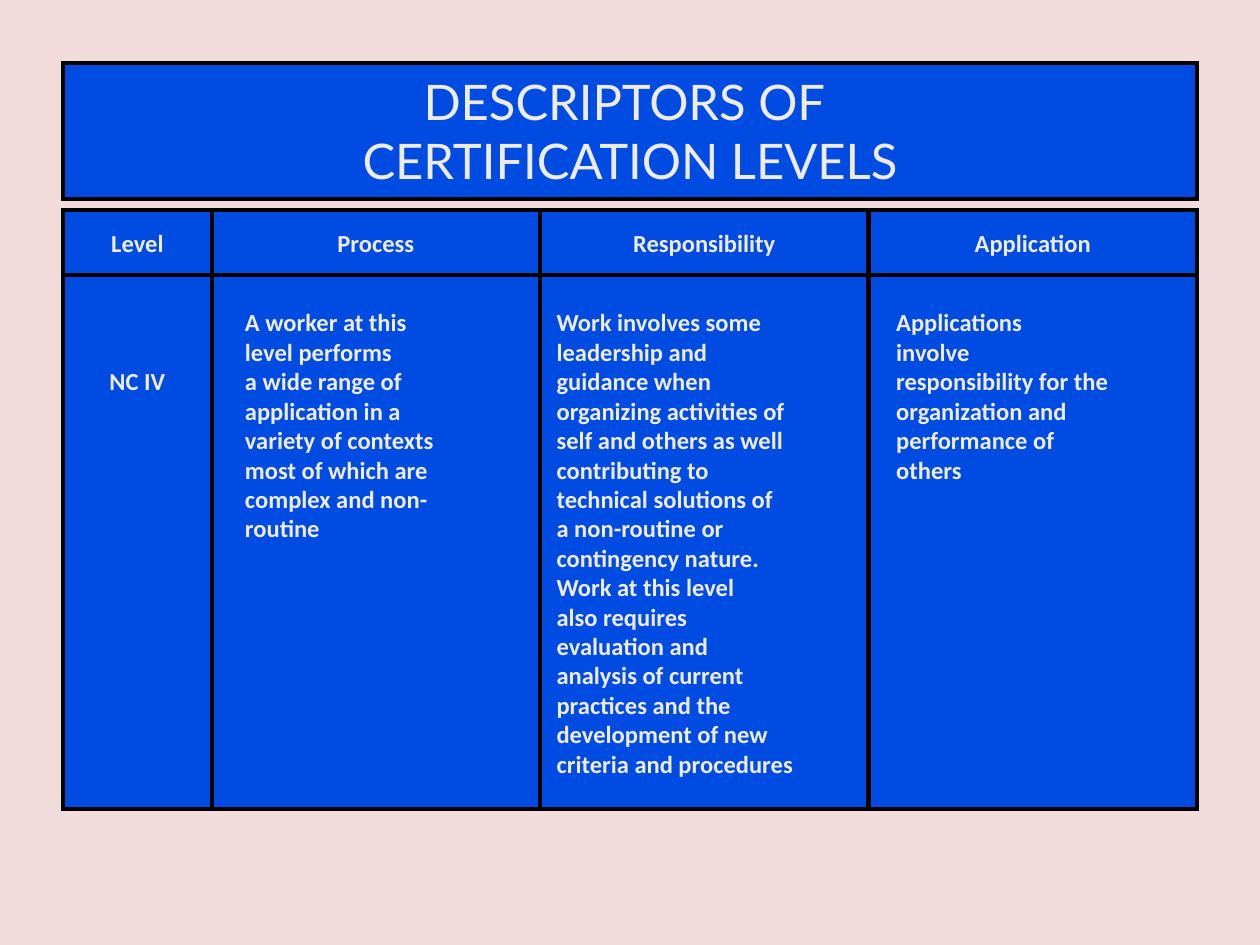
from lxml import etree
from pptx import Presentation
from pptx.dml.color import RGBColor
from pptx.enum import shapes, text
from pptx.oxml import ns
from pptx.util import Pt

BLUE, BLACK, CREAM, PINK = "004BE2", "000000", "EEECE1", "F2DCDB"
LEFT, WIDTH = 36, 648
LEVEL_WIDTH = 85
HEAD_TOP, HEAD_HEIGHT, BODY_HEIGHT = 120, 37, 305.3
INSET_X, INSET_Y = 9.4, 5

TITLE = ["DESCRIPTORS OF ", "CERTIFICATION LEVELS"]

# heading, body lines, body left inset, body top inset
COLUMNS = [
    ("Level", ["NC IV"], INSET_X, 52.3),
    ("Process", [
        "A worker at this", "level performs", "a wide range of",
        "application in a", "variety of contexts", "most of which are",
        "complex and non-", "routine"], 19, 18.7),
    ("Responsibility", [
        "Work involves some", "leadership and", "guidance when",
        "organizing activities of", "self and others as well",
        "contributing to", "technical solutions of", "a non-routine or",
        "contingency nature.", "Work at this level", "also requires",
        "evaluation and", "analysis of current", "practices and the",
        "development of new", "criteria and procedures"], INSET_X, 18.7),
    ("Application", [
        "Applications", "involve", "responsibility for the",
        "organization and", "performance of", "others"], 15.8, 18.7),
]


def paint(fill, color):
    fill.solid()
    fill.fore_color.rgb = RGBColor.from_string(color)


def style_box(box, anchor, left=INSET_X, top=INSET_Y):
    """Give a box the blue panel look, with square outline corners."""
    paint(box.fill, BLUE)
    paint(box.line.fill, BLACK)
    box.line.width = Pt(2.25)
    outline = box._element.spPr.find(ns.qn("a:ln"))
    etree.SubElement(outline, ns.qn("a:miter"), lim="800000")
    frame = box.text_frame
    frame.word_wrap = True
    frame.auto_size = text.MSO_AUTO_SIZE.NONE
    frame.vertical_anchor = anchor
    frame.margin_left, frame.margin_right = Pt(left), Pt(INSET_X)
    frame.margin_top, frame.margin_bottom = Pt(top), Pt(INSET_Y)


def write(frame, lines, font, size, bold, align):
    for index, line in enumerate(lines):
        para = frame.paragraphs[0] if index == 0 else frame.add_paragraph()
        para.alignment = align
        span = para.add_run()
        span.text = line
        span.font.name = font
        span.font.size = Pt(size)
        span.font.bold = bold
        span.font.color.rgb = RGBColor.from_string(CREAM)


def add_title(page):
    box = page.shapes.title
    box.left, box.top, box.width, box.height = Pt(LEFT), Pt(36), Pt(WIDTH), Pt(77.8)
    style_box(box, text.MSO_ANCHOR.TOP)
    write(box.text_frame, TITLE, "Lato", 28, False, text.PP_ALIGN.CENTER)


def add_cell(grid, place, lines, align, anchor, **insets):
    box = grid.shapes.add_shape(shapes.MSO_SHAPE.RECTANGLE, *map(Pt, place))
    box.shadow.inherit = False
    style_box(box, anchor, **insets)
    write(box.text_frame, lines, "Calibri", 14, True, align)


def add_levels(page):
    grid = page.shapes.add_group_shape()
    wide = (WIDTH - LEVEL_WIDTH) / (len(COLUMNS) - 1)
    center, start = text.PP_ALIGN.CENTER, text.PP_ALIGN.LEFT
    x = LEFT
    for index, (heading, lines, left, top) in enumerate(COLUMNS):
        width = wide if index else LEVEL_WIDTH
        add_cell(grid, (x, HEAD_TOP, width, HEAD_HEIGHT), [heading], center,
                 text.MSO_ANCHOR.MIDDLE)
        add_cell(grid, (x, HEAD_TOP + HEAD_HEIGHT, width, BODY_HEIGHT), lines,
                 start if index else center, text.MSO_ANCHOR.TOP,
                 left=left, top=top)
        x += width


def main():
    deck = Presentation()
    deck.slide_width, deck.slide_height = Pt(720), Pt(540)
    page = deck.slides.add_slide(deck.slide_layouts[5])
    paint(page.background.fill, PINK)
    add_title(page)
    add_levels(page)
    deck.save("out.pptx")


if __name__ == "__main__":
    main()
